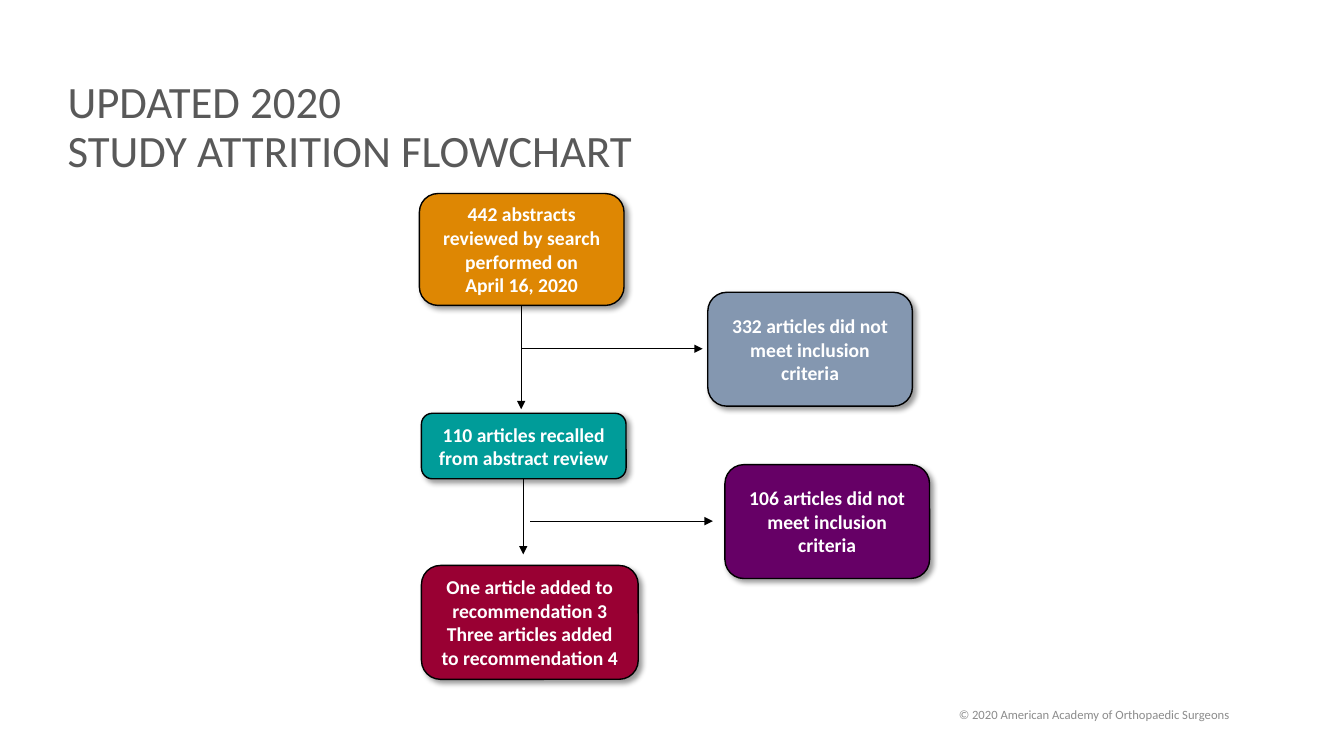
from dataclasses import dataclass

from lxml import etree
from pptx import Presentation, util as u
from pptx.dml.color import RGBColor
from pptx.enum import shapes, text
from pptx.oxml import parse_xml
from pptx.oxml.ns import nsdecls, qn

PX = 9144  # EMU per px, 100 px to the inch

BLACK = RGBColor(0x00, 0x00, 0x00)
WHITE = RGBColor(0xFF, 0xFF, 0xFF)
TITLE_GREY = RGBColor(0x59, 0x59, 0x59)
FOOTER_GREY = RGBColor(0x8C, 0x8C, 0x8C)
ORANGE = RGBColor(0xDE, 0x87, 0x03)
TEAL = RGBColor(0x00, 0x9C, 0x99)
PURPLE = RGBColor(0x66, 0x00, 0x66)
CRIMSON = RGBColor(0x99, 0x00, 0x33)
SLATE = RGBColor(0x84, 0x97, 0xB0)

SHADOW = f"""<a:outerShdw {nsdecls('a')} blurRad="50800" dist="38100" dir="2700000"
    algn="tl" rotWithShape="0"><a:srgbClr val="000000"><a:alpha val="40000"/></a:srgbClr></a:outerShdw>"""


@dataclass(frozen=True)
class Stage:
    left: int
    top: int
    width: int
    height: int
    fill: RGBColor
    wording: str


@dataclass(frozen=True)
class Arrow:
    x1: int
    y1: int
    x2: int
    y2: int


STAGES = [
    Stage(416, 192, 203, 111, ORANGE,
          "442 abstracts reviewed by search performed on\vApril 16, 2020"),
    Stage(418, 410, 203, 65, TEAL, "110 articles recalled from abstract review"),
    Stage(719, 461, 203, 113, PURPLE, "106 articles did not meet inclusion criteria"),
    Stage(418, 561, 215, 113, CRIMSON,
          "One article added to recommendation 3\nThree articles added to recommendation 4"),
    Stage(702, 290, 203, 113, SLATE, "332 articles did not meet inclusion criteria"),
]

ARROWS = [
    Arrow(517, 294, 517, 406),
    Arrow(517, 346, 697, 346),
    Arrow(519, 437, 519, 550),
    Arrow(526, 517, 707, 517),
]


def px(*lengths: int) -> list[int]:
    return [length * PX for length in lengths]


def write(frame, wording: str, size: int, colour: RGBColor, bold: bool = False,
          align=text.PP_ALIGN.CENTER, spacing: float = 1.0) -> None:
    frame.text = wording
    frame_format = {"word_wrap": True, "auto_size": text.MSO_AUTO_SIZE.NONE,
                    "vertical_anchor": text.MSO_ANCHOR.MIDDLE}
    for name, value in frame_format.items():
        setattr(frame, name, value)
    font_format = {"name": "Calibri", "size": u.Pt(size), "bold": bold}
    for paragraph in frame.paragraphs:
        paragraph.alignment = align
        paragraph.line_spacing = spacing
        for name, value in font_format.items():
            setattr(paragraph.font, name, value)
        paragraph.font.color.rgb = colour


def draw_arrow(slide, arrow: Arrow) -> None:
    connector = slide.shapes.add_connector(
        shapes.MSO_CONNECTOR.STRAIGHT, *px(arrow.x1, arrow.y1, arrow.x2, arrow.y2))
    connector.line.color.rgb = BLACK
    connector.line.width = u.Pt(0.5)
    etree.SubElement(connector.line._get_or_add_ln(), qn("a:tailEnd"), type="triangle")
    etree.SubElement(connector._element.spPr, qn("a:effectLst"))


def draw_stage(slide, stage: Stage) -> None:
    box = slide.shapes.add_shape(
        shapes.MSO_SHAPE.ROUNDED_RECTANGLE,
        *px(stage.left, stage.top, stage.width, stage.height))
    box.fill.solid()
    box.fill.fore_color.rgb = stage.fill
    box.line.color.rgb = BLACK
    box.line.width = u.Pt(1)
    box.shadow.inherit = False
    box._element.spPr.find(qn("a:effectLst")).append(parse_xml(SHADOW))
    write(box.text_frame, stage.wording, 14, WHITE, bold=True)


def main() -> None:
    deck = Presentation()
    deck.slide_width, deck.slide_height = px(1333, 750)
    slide = deck.slides.add_slide(deck.slide_layouts.get_by_name("Title Only"))

    title = slide.shapes.title
    title.left, title.top, title.width, title.height = px(57, 59, 643, 137)
    write(title.text_frame, "UPDATED 2020\nSTUDY ATTRITION FLOWCHART", 32, TITLE_GREY,
          align=text.PP_ALIGN.LEFT, spacing=0.9)

    copyright_line = slide.shapes.add_textbox(*px(860, 689, 450, 40))
    write(copyright_line.text_frame, "© 2020 American Academy of Orthopaedic Surgeons",
          9, FOOTER_GREY)

    for arrow in ARROWS:
        draw_arrow(slide, arrow)
    for stage in STAGES:
        draw_stage(slide, stage)

    deck.save("out.pptx")


if __name__ == "__main__":
    main()
